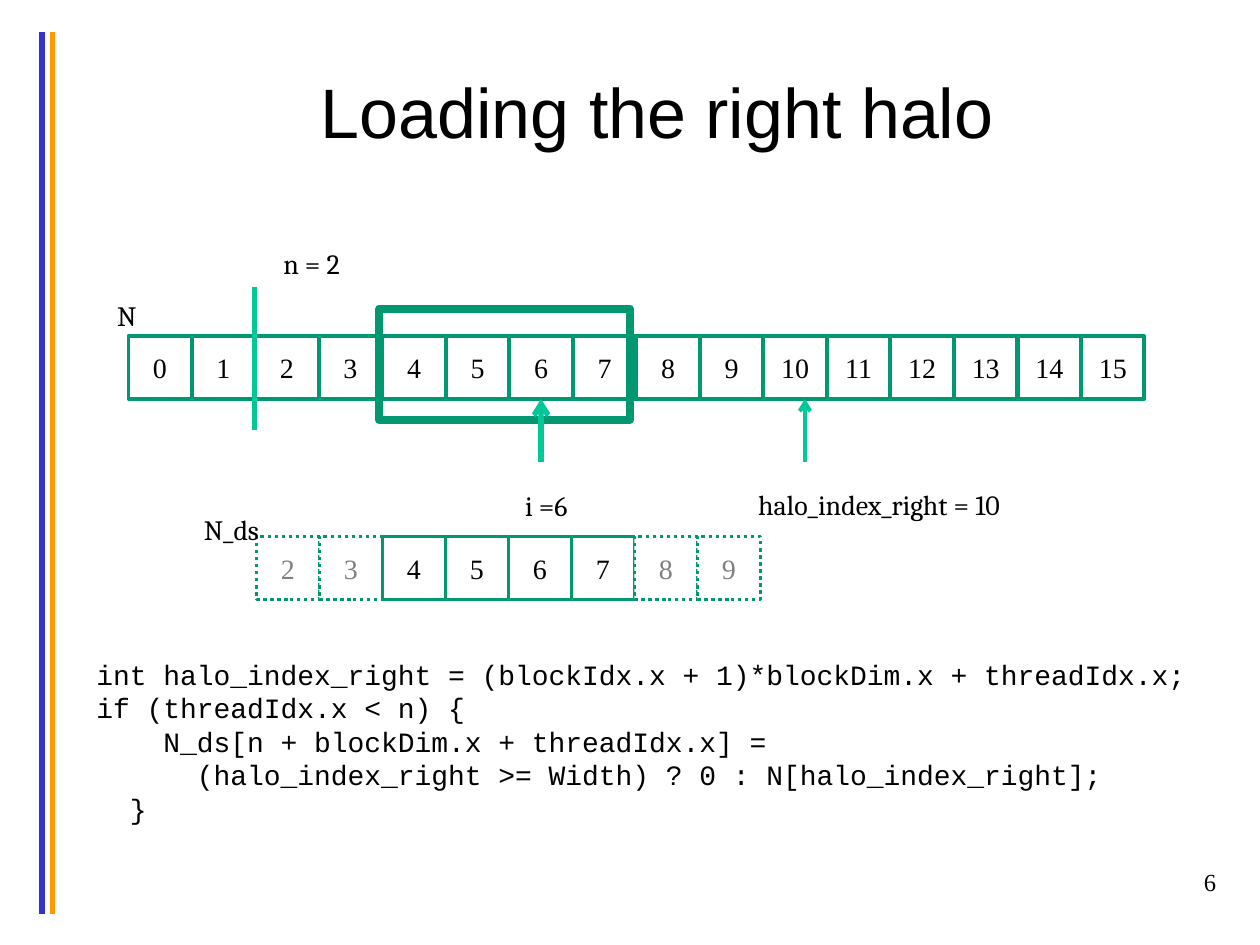
from dataclasses import dataclass

from lxml import etree
from pptx import Presentation
from pptx.dml.color import RGBColor
from pptx.enum.dml import MSO_LINE
from pptx.enum.shapes import MSO_CONNECTOR, MSO_SHAPE
from pptx.enum.text import MSO_ANCHOR, MSO_AUTO_SIZE, PP_ALIGN
from pptx.oxml.ns import qn
from pptx.util import Pt

LEFT, CENTER, RIGHT = PP_ALIGN.LEFT, PP_ALIGN.CENTER, PP_ALIGN.RIGHT
TOP, MIDDLE = MSO_ANCHOR.TOP, MSO_ANCHOR.MIDDLE
FIT_TEXT = MSO_AUTO_SIZE.SHAPE_TO_FIT_TEXT
STRAIGHT, RECTANGLE = MSO_CONNECTOR.STRAIGHT, MSO_SHAPE.RECTANGLE
DOTTED = MSO_LINE.ROUND_DOT
BOTTOM_SIDE = 2


@dataclass(frozen=True)
class Theme:
    ink: str = "000000"
    muted: str = "808080"
    paper: str = "FFFFFF"
    cell_line: str = "009771"
    marker: str = "00C896"
    blue_bar: str = "3333CC"
    orange_bar: str = "FF9900"
    title_font: str = "Arial"
    label_font: str = "Cambria"
    code_font: str = "Courier New"
    number_font: str = "Times New Roman"
    title_size: float = 40
    body_size: float = 16
    page_number_size: float = 14


class SlideBuilder:
    def __init__(self, page, theme):
        self.page = page
        self.theme = theme

    def fill_text(self, frame, text, font, size, color, align):
        frame.text = text
        for para in frame.paragraphs:
            para.alignment = align
            para.font.name = font
            para.font.size = Pt(size)
            para.font.color.rgb = RGBColor.from_string(color)

    def text(self, text, left, top, width, height, font, size,
             align=LEFT, anchor=TOP, wrap=True):
        box = self.page.shapes.add_textbox(Pt(left), Pt(top), Pt(width), Pt(height))
        frame = box.text_frame
        frame.word_wrap = wrap
        frame.vertical_anchor = anchor
        if not wrap:
            frame.auto_size = FIT_TEXT
        self.fill_text(frame, text, font, size, self.theme.ink, align)

    def label(self, text, left, top, width):
        self.text(text, left, top, width, 26.6, self.theme.label_font,
                  self.theme.body_size, wrap=False)

    def rectangle(self, left, top, width, height, weight, filled=True):
        box = self.page.shapes.add_shape(
            RECTANGLE, Pt(left), Pt(top), Pt(width), Pt(height))
        box.shadow.inherit = False
        if filled:
            box.fill.solid()
            box.fill.fore_color.rgb = RGBColor.from_string(self.theme.paper)
        else:
            box.fill.background()
        box.line.color.rgb = RGBColor.from_string(self.theme.cell_line)
        box.line.width = Pt(weight)
        return box

    def array(self, values, left, top, pitch, halo=()):
        """Draw a row of numbered cells, dotted for halo values; return them by value."""
        cells = {}
        for index, value in enumerate(values):
            cell = self.rectangle(left + index * pitch, top, 36, 36, 2,
                                  filled=value not in (7, 14))
            color = self.theme.ink
            if value in halo:
                cell.line.dash_style = DOTTED
                color = self.theme.muted
            frame = cell.text_frame
            frame.word_wrap = False
            frame.vertical_anchor = MIDDLE
            self.fill_text(frame, str(value), self.theme.number_font,
                           self.theme.body_size, color, CENTER)
            cells[value] = cell
        return cells

    def vertical_line(self, x, start, end, color, weight, arrow=False):
        line = self.page.shapes.add_connector(
            STRAIGHT, Pt(x), Pt(start), Pt(x), Pt(end))
        line.line.color.rgb = RGBColor.from_string(color)
        line.line.width = Pt(weight)
        properties = line._element.spPr
        if arrow:
            outline = properties.find(qn("a:ln"))
            etree.SubElement(outline, qn("a:tailEnd"), type="arrow")
        etree.SubElement(properties, qn("a:effectLst"))
        return line


CODE = """int halo_index_right = (blockIdx.x + 1)*blockDim.x + threadIdx.x;
if (threadIdx.x < n) {
    N_ds[n + blockDim.x + threadIdx.x] =
      (halo_index_right >= Width) ? 0 : N[halo_index_right];
  }"""


def main():
    deck = Presentation()
    deck.slide_width, deck.slide_height = Pt(720), Pt(540)
    theme = Theme()
    slide = SlideBuilder(deck.slides.add_slide(deck.slide_layouts[6]), theme)

    slide.vertical_line(24, 18, 522, theme.blue_bar, 3)
    slide.vertical_line(30, 18, 522, theme.orange_bar, 3)
    slide.text("Loading the right halo ", 54, 18, 654, 90, theme.title_font,
               theme.title_size, CENTER, MIDDLE)
    slide.text("6", 552, 492, 150, 36, theme.number_font,
               theme.page_number_size, RIGHT)
    slide.text(CODE, 48, 372, 646.5, 104.4, theme.code_font,
               theme.body_size, wrap=False)

    # Input array, with the current block framed
    pitch, left, top = 36.3, 73.4, 192
    cells = slide.array(range(16), left, top, pitch)
    slide.rectangle(216.7, 176.4, 143.3, 63.4, 4.5, filled=False)

    index_x = left + 6 * pitch + 18
    index_arrow = slide.vertical_line(index_x, 264, 228, theme.marker, 3, arrow=True)
    index_arrow.end_connect(cells[6], BOTTOM_SIDE)
    slide.vertical_line(460, 264, 228, theme.marker, 2.25, arrow=True)
    slide.vertical_line(145.5, 164, 246, theme.marker, 3)

    # Shared-memory array, with halo cells on both sides
    slide.array(range(2, 10), 146.5, 306.5, 36, halo=(2, 3, 8, 9))

    slide.label("i =6", 293, 275.8, 40.3)
    slide.label("halo_index_right = 10", 426.2, 275, 158.4)
    slide.label("n = 2", 154.8, 137.5, 47.5)
    slide.label("N", 59.8, 167, 25.9)
    slide.label("N_ds", 109.4, 289.4, 49)

    deck.save("out.pptx")


if __name__ == "__main__":
    main()
